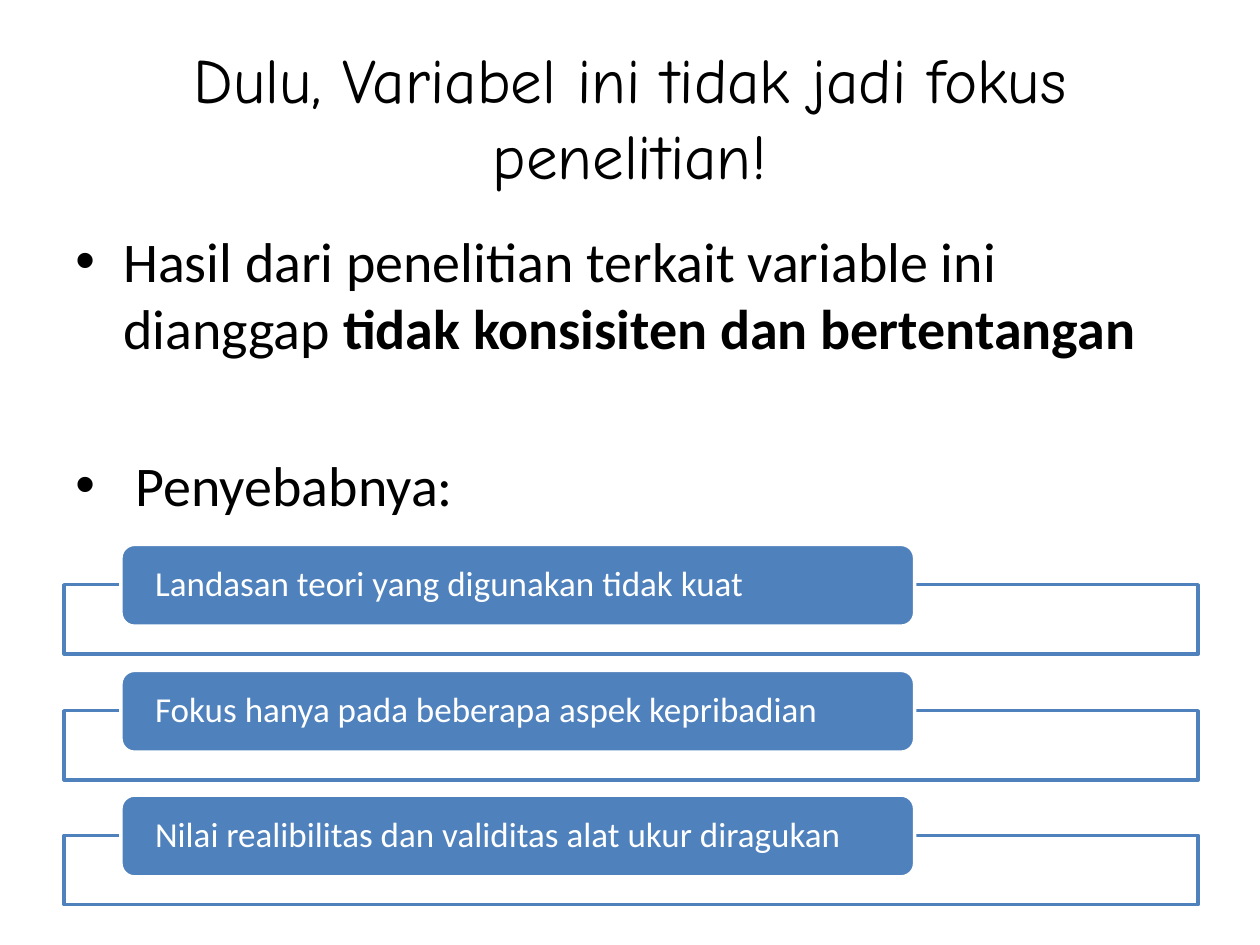
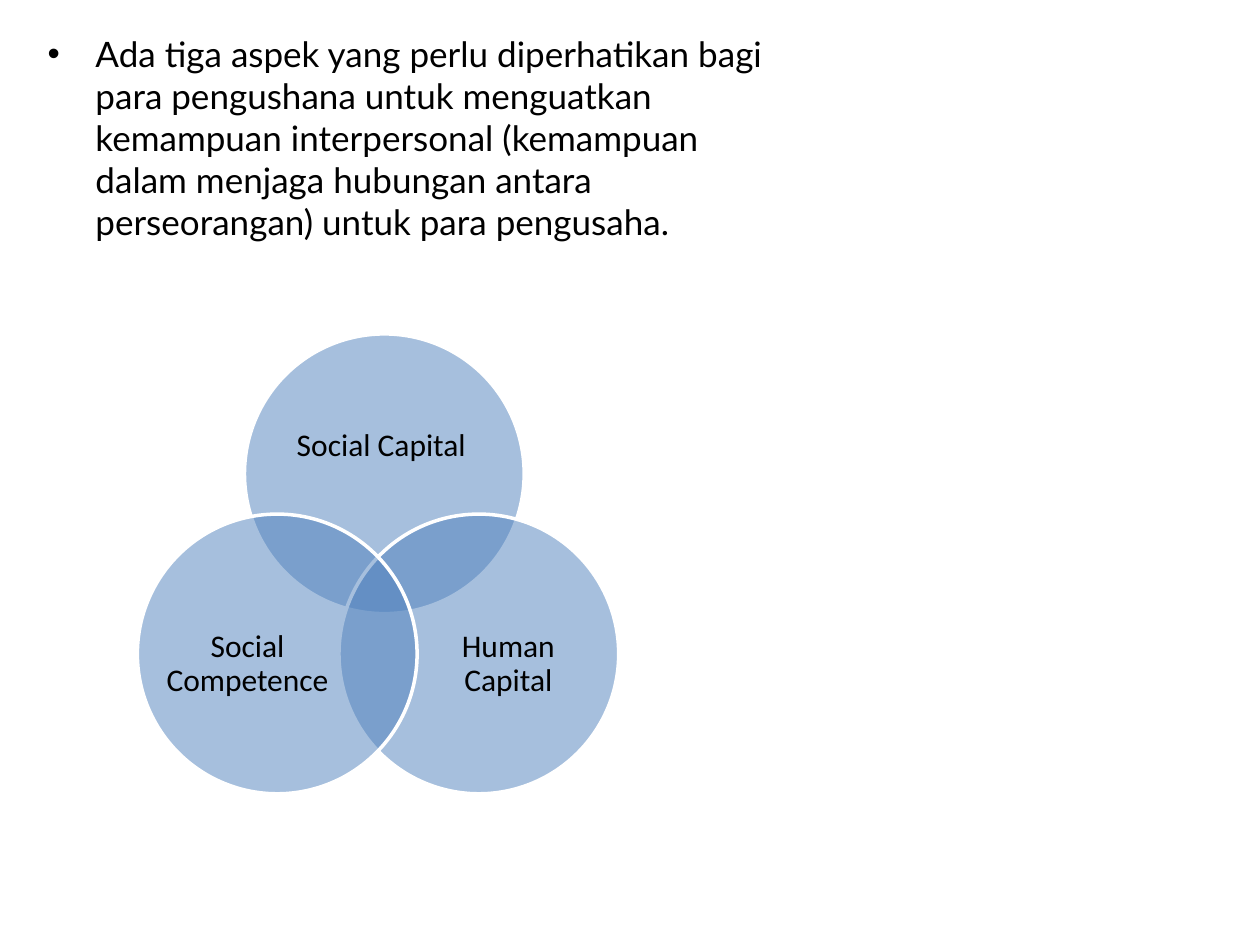
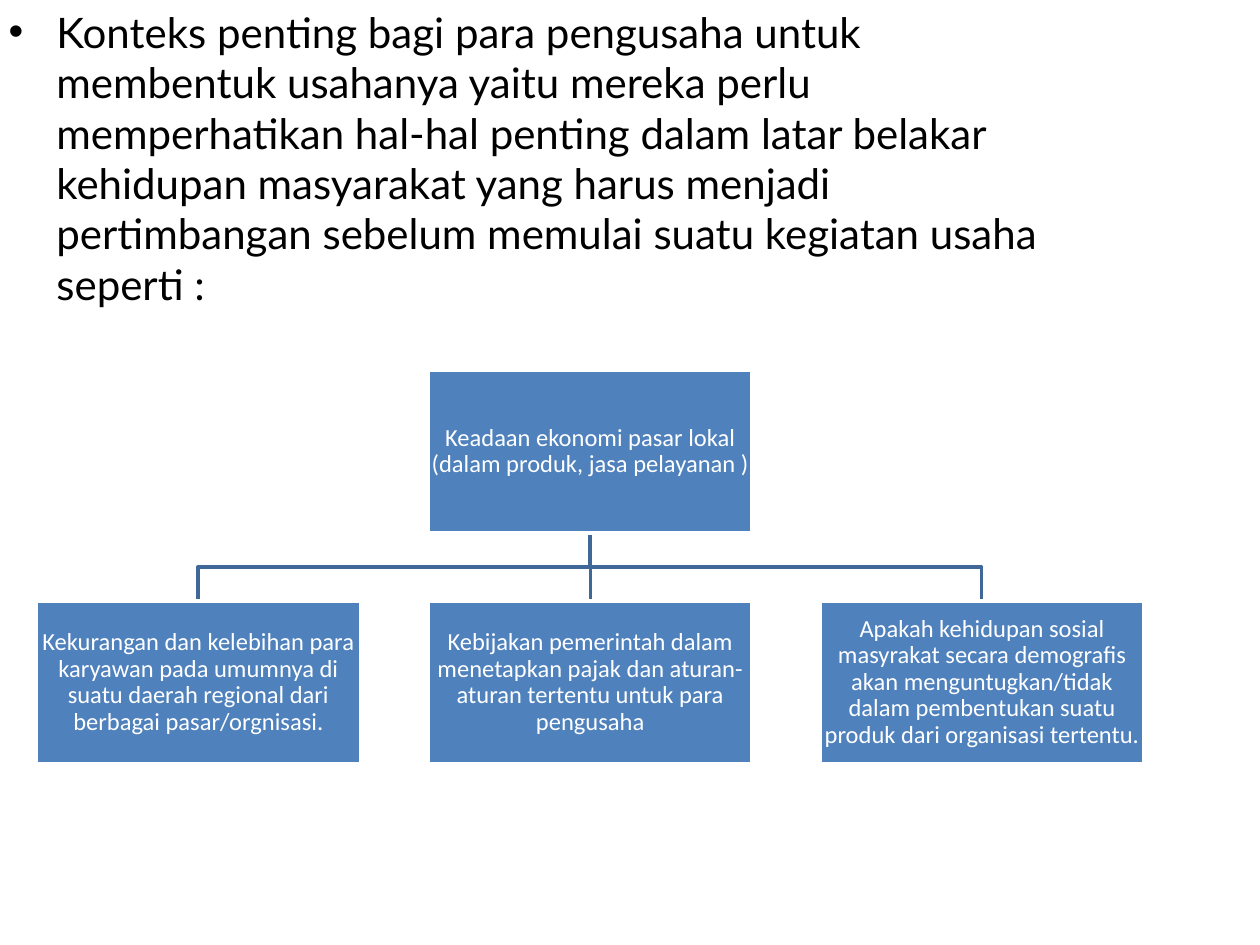
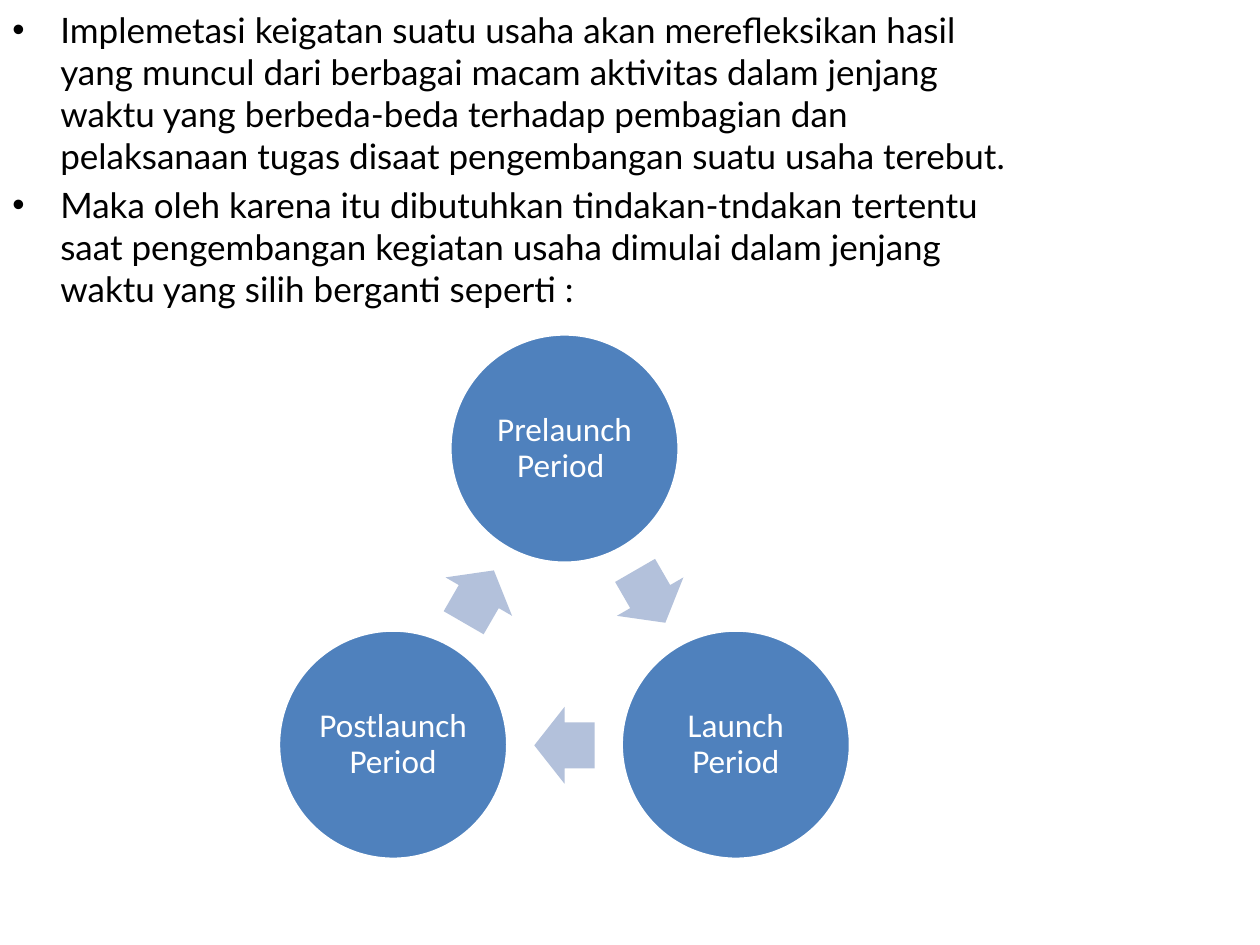
from math import cos, radians, sin

from lxml.etree import SubElement
from pptx import Presentation
from pptx.dml.color import RGBColor
from pptx.enum.shapes import MSO_CONNECTOR, MSO_SHAPE
from pptx.enum.text import MSO_ANCHOR, PP_ALIGN
from pptx.oxml.ns import qn
from pptx.util import Pt

PX = 9144
COLORS = {
    "text": "000000",
    "paper": "FFFFFF",
    "accent": "4F81BD",
    "branch": "3F6797",
    "arrow": "B3C1DB",
}
TITLE_FONT, LABEL_FONT, BODY_FONT = "Comic Neue", "Calibri", "Lato"
HANGING = 38


def color(name):
    return RGBColor.from_string(COLORS[name])


class Deck:
    def __init__(self, width, height):
        self.presentation = Presentation()
        self.presentation.slide_width = width * PX
        self.presentation.slide_height = height * PX
        self.slide = None

    def new_slide(self):
        self.slide = self.presentation.slides.add_slide(self.presentation.slide_layouts[6])

    def frame(self, holder, insets, anchor):
        frame = holder.text_frame
        frame.word_wrap = True
        frame.vertical_anchor = anchor
        frame.margin_left = frame.margin_right = insets[0] * PX
        frame.margin_top = frame.margin_bottom = insets[1] * PX
        return frame

    def text_box(self, at, insets=(10, 5), anchor=MSO_ANCHOR.TOP):
        box = self.slide.shapes.add_textbox(*(length * PX for length in at))
        return self.frame(box, insets, anchor)

    def style(self, paragraph, size, font, ink, align):
        paragraph.alignment = align
        paragraph.font.size = Pt(size)
        paragraph.font.name = font
        paragraph.font.color.rgb = color(ink)

    def title(self, at, wording):
        paragraph = self.text_box(at, anchor=MSO_ANCHOR.MIDDLE).paragraphs[0]
        paragraph.text = wording
        self.style(paragraph, 36, TITLE_FONT, "text", PP_ALIGN.CENTER)

    def bullets(self, at, size, items, font=BODY_FONT, gap=None, hangings=None):
        frame = self.text_box(at)
        for index, item in enumerate(items):
            paragraph = frame.paragraphs[0] if index == 0 else frame.add_paragraph()
            plain, strong = item if isinstance(item, tuple) else (item, None)
            paragraph.add_run().text = plain
            if strong:
                emphasis = paragraph.add_run()
                emphasis.text = strong
                emphasis.font.bold = True
            hanging = (hangings[index] if hangings else HANGING) * PX
            properties = paragraph._p.get_or_add_pPr()
            properties.set("marL", str(hanging))
            properties.set("indent", str(-hanging))
            SubElement(properties, qn("a:buFont")).set("typeface", "Arial")
            SubElement(properties, qn("a:buChar")).set("char", "•")
            if index:
                paragraph.space_before = Pt(gap or size // 5)
            self.style(paragraph, size, font, "text", PP_ALIGN.LEFT)

    def shape(self, kind, at, fill, line="paper", alpha=None):
        shape = self.slide.shapes.add_shape(kind, *(length * PX for length in at))
        shape.shadow.inherit = False
        shape.fill.solid()
        shape.fill.fore_color.rgb = color(fill)
        if alpha:
            tint = shape._element.spPr.find(qn("a:solidFill"))[0]
            SubElement(tint, qn("a:alpha")).set("val", str(alpha * 1000))
        if line:
            self.outline(shape, line)
        else:
            shape.line.fill.background()
        return shape

    def outline(self, shape, line):
        shape.line.color.rgb = color(line)
        shape.line.width = Pt(2)

    def label(self, frame, wording, size, ink="paper", align=PP_ALIGN.CENTER):
        paragraph = frame.paragraphs[0]
        paragraph.text = wording
        paragraph.line_spacing = 0.9
        self.style(paragraph, size, LABEL_FONT, ink, align)

    def labelled_shape(self, kind, at, wording, size, insets, align=PP_ALIGN.CENTER):
        shape = self.shape(kind, at, "accent")
        self.label(self.frame(shape, insets, MSO_ANCHOR.MIDDLE), wording, size, align=align)
        return shape

    def branch(self, points):
        start, *rest = [(x * PX, y * PX) for x, y in points]
        builder = self.slide.shapes.build_freeform(*start)
        builder.add_line_segments(rest, close=False)
        elbow = builder.convert_to_shape()
        elbow.shadow.inherit = False
        elbow.fill.background()
        self.outline(elbow, "branch")

    def straight_branch(self, parent, child):
        trunk = self.slide.shapes.add_connector(MSO_CONNECTOR.STRAIGHT, 0, 0, 0, 0)
        trunk.begin_connect(parent, 2)
        trunk.end_connect(child, 0)
        self.outline(trunk, "branch")
        element = trunk._element
        SubElement(element.spPr, qn("a:effectLst"))
        element.getparent().insert(2, element)


def research_slide(deck):
    deck.new_slide()
    deck.title((50, 30, 900, 125), "Dulu, Variabel ini tidak jadi fokus penelitian!")
    findings = (
        "Hasil dari penelitian terkait variable ini dianggap ",
        "tidak konsisiten dan bertentangan",
    )
    deck.bullets((50, 175, 900, 495), 32, [findings, "Penyebabnya:"],
                 font=LABEL_FONT, gap=51, hangings=(HANGING, 48))
    causes = [
        "Landasan teori yang digunakan tidak kuat",
        "Fokus hanya pada beberapa aspek kepribadian",
        "Nilai realibilitas dan validitas alat ukur diragukan",
    ]
    for row, cause in enumerate(causes):
        top = 432 + round(99.5 * row)
        deck.shape(MSO_SHAPE.RECTANGLE, (51, top + 32, 900, 55), "paper", "accent", alpha=90)
        deck.labelled_shape(MSO_SHAPE.ROUNDED_RECTANGLE, (96, top, 630, 65), cause, 20,
                            (24, 0), PP_ALIGN.LEFT)


def aspects_slide(deck):
    deck.new_slide()
    deck.bullets((28, 21, 606, 323), 20, [
        "Ada tiga aspek yang perlu diperhatikan bagi para pengushana untuk menguatkan "
        "kemampuan interpersonal (kemampuan dalam menjaga hubungan antara perseorangan) "
        "untuk para pengusaha.",
    ])
    aspects = [
        ("Social Capital ", (194, 265), (224, 304, 163, 100)),
        ("Human Capital", (269, 408), (337, 466, 133, 122)),
        ("Social Competence", (109, 408), (130, 466, 133, 122)),
    ]
    for aspect, corner, label_area in aspects:
        deck.shape(MSO_SHAPE.OVAL, (*corner, 222, 222), "accent", alpha=50)
        deck.label(deck.text_box(label_area, (0, 0), MSO_ANCHOR.MIDDLE), aspect, 18, "text")


def context_slide(deck):
    deck.new_slide()
    deck.bullets((-3, 0, 866, 399), 24, [
        "Konteks penting bagi para pengusaha untuk membentuk usahanya yaitu mereka perlu "
        "memperhatikan hal-hal penting dalam latar belakar kehidupan masyarakat yang harus "
        "menjadi pertimbangan sebelum memulai suatu kegiatan usaha seperti :",
    ])
    width, height = 257, 129
    center, step = 468, 311
    economy_top, factor_top = 294, 477
    economy_bottom = economy_top + height
    middle = (economy_bottom + factor_top) // 2
    for x in (center + step, center - step):
        deck.branch([(center, economy_bottom), (center, middle), (x, middle), (x, factor_top)])

    def box(x, top, wording):
        return deck.labelled_shape(MSO_SHAPE.RECTANGLE, (x - width // 2, top, width, height),
                                   wording, 14, (1, 1))

    economy = box(center, economy_top,
                  "Keadaan ekonomi pasar lokal (dalam produk, jasa pelayanan )")
    factors = [
        "Kekurangan dan kelebihan para karyawan pada umumnya di suatu daerah regional dari "
        "berbagai pasar/orgnisasi.",
        "Kebijakan pemerintah dalam menetapkan pajak dan aturan-aturan tertentu untuk para "
        "pengusaha",
        "Apakah kehidupan sosial masyrakat secara demografis akan menguntugkan/tidak dalam "
        "pembentukan suatu produk dari organisasi tertentu.",
    ]
    factor_boxes = [box(center + step * (column - 1), factor_top, factor)
                    for column, factor in enumerate(factors)]
    deck.straight_branch(economy, factor_boxes[1])


def periods_slide(deck):
    deck.new_slide()
    deck.bullets((0, 2, 831, 459), 20, [
        "Implemetasi keigatan suatu usaha akan merefleksikan hasil yang muncul dari berbagai "
        "macam aktivitas dalam jenjang waktu yang berbeda-beda terhadap pembagian dan "
        "pelaksanaan tugas disaat pengembangan suatu usaha terebut.",
        "Maka oleh karena itu dibutuhkan tindakan-tndakan tertentu saat pengembangan kegiatan "
        "usaha dimulai dalam jenjang waktu yang silih berganti seperti :",
    ])
    radius = 157

    def on_ring(distance, angle, width, height):
        x = 448 + distance * cos(radians(angle))
        y = 513 + distance * sin(radians(angle))
        return round(x - width / 2), round(y - height / 2), width, height

    for index, period in enumerate(["Prelaunch Period ", "Launch Period", "Postlaunch Period"]):
        turn = 120 * index
        deck.labelled_shape(MSO_SHAPE.OVAL, on_ring(radius, turn - 90, 182, 182),
                            period, 19, (3, 3))
        arrow = deck.shape(MSO_SHAPE.RIGHT_ARROW, on_ring(radius / 2, turn - 30, 48, 61),
                           "arrow", line=None)
        arrow.adjustments[0] = 0.6
        arrow.adjustments[1] = 0.5
        arrow.rotation = turn + 60


def main():
    deck = Deck(1000, 750)
    research_slide(deck)
    aspects_slide(deck)
    context_slide(deck)
    periods_slide(deck)
    deck.presentation.save("out.pptx")


if __name__ == "__main__":
    main()
